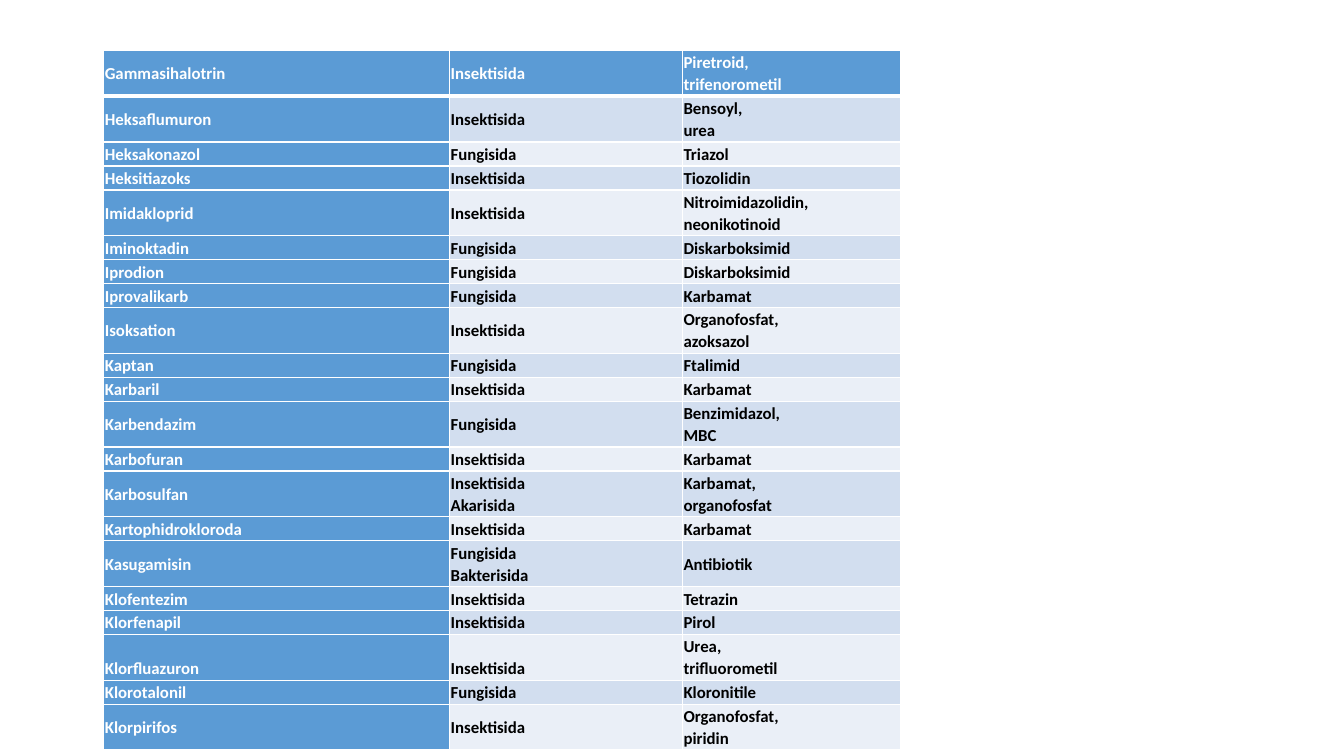
"""Build a slide with a table of pesticide ingredients, types and groups."""
from lxml.etree import fromstring
from pptx import Presentation
from pptx.dml.color import RGBColor
from pptx.enum.text import MSO_ANCHOR
from pptx.oxml.ns import nsdecls
from pptx.util import Inches, Pt

ROWS = [
    ("Gammasihalotrin", "Insektisida", "Piretroid,\ntrifenorometil"),
    ("Heksaflumuron", "Insektisida", "Bensoyl,\nurea"),
    ("Heksakonazol", "Fungisida", "Triazol"),
    ("Heksitiazoks", "Insektisida", "Tiozolidin"),
    ("Imidakloprid", "Insektisida", "Nitroimidazolidin,\nneonikotinoid"),
    ("Iminoktadin", "Fungisida", "Diskarboksimid"),
    ("Iprodion", "Fungisida", "Diskarboksimid"),
    ("Iprovalikarb", "Fungisida", "Karbamat"),
    ("Isoksation", "Insektisida", "Organofosfat,\nazoksazol"),
    ("Kaptan", "Fungisida", "Ftalimid"),
    ("Karbaril", "Insektisida", "Karbamat"),
    ("Karbendazim", "Fungisida", "Benzimidazol,\nMBC"),
    ("Karbofuran", "Insektisida", "Karbamat"),
    ("Karbosulfan", "Insektisida\nAkarisida", "Karbamat,\norganofosfat"),
    ("Kartophidrokloroda", "Insektisida", "Karbamat"),
    ("Kasugamisin", "Fungisida\nBakterisida", "Antibiotik"),
    ("Klofentezim", "Insektisida", "Tetrazin"),
    ("Klorfenapil", "Insektisida", "Pirol"),
    ("Klorfluazuron", "Insektisida", "Urea,\ntrifluorometil"),
    ("Klorotalonil", "Fungisida", "Kloronitile"),
    ("Klorpirifos", "Insektisida", "Organofosfat,\npiridin"),
]
WIDTHS = (3.43, 2.31, 2.16)
LOW = "Klorfluazuron"


def color(code):
    return RGBColor.from_string(code)


class Deck:
    font, size, pad = "Calibri", Pt(12), Inches(0.01)
    blue, white, black = "5B9BD5", "FFFFFF", "000000"
    bands = ("EAEFF7", "D2DEEF")

    def __init__(self):
        self.file = Presentation()
        self.file.slide_width = Inches(13.33)
        self.file.slide_height = Inches(7.5)
        self.slide = self.file.slides.add_slide(self.file.slide_layouts[6])

    def edge(self, cell, side, width):
        props = cell._tc.get_or_add_tcPr()
        line = fromstring(
            f'<a:ln{side} {nsdecls("a")} w="{Pt(width)}"><a:solidFill>'
            f'<a:srgbClr val="{self.white}"/></a:solidFill></a:ln{side}>')
        props.append(line)

    def cell(self, cell, text, row, col):
        for side in "LRTB":
            thick = (row, side) in ((0, "B"), (1, "T"))
            self.edge(cell, side, 3 if thick else 1)
        head = row == 0 or col == 0
        cell.fill.solid()
        cell.fill.fore_color.rgb = color(self.blue if head else self.bands[row % 2])
        cell.margin_left = cell.margin_right = self.pad
        cell.margin_top = cell.margin_bottom = self.pad
        low = ROWS[row][0] == LOW and col < 2
        cell.vertical_anchor = MSO_ANCHOR.BOTTOM if low else MSO_ANCHOR.MIDDLE
        para = cell.text_frame.paragraphs[0]
        para.text = text
        para.line_spacing = 1.07
        para.font.name, para.font.size, para.font.bold = self.font, self.size, True
        para.font.color.rgb = color(self.white if head else self.black)

    def table(self, left, top, widths, rows):
        highs = [0.43 if "\n" in "".join(row) else 0.22 for row in rows]
        grid = self.slide.shapes.add_table(
            len(rows), len(widths), Inches(left), Inches(top),
            Inches(sum(widths)), Inches(sum(highs))).table
        grid.first_col = True
        for part, width in zip(grid.columns, widths):
            part.width = Inches(width)
        for r, (row, high) in enumerate(zip(rows, highs)):
            grid.rows[r].height = Inches(high)
            for c, text in enumerate(row):
                self.cell(grid.cell(r, c), text, r, c)


def main():
    deck = Deck()
    deck.table(1.03, 0.5, WIDTHS, ROWS)
    deck.file.save("out.pptx")


if __name__ == "__main__":
    main()
